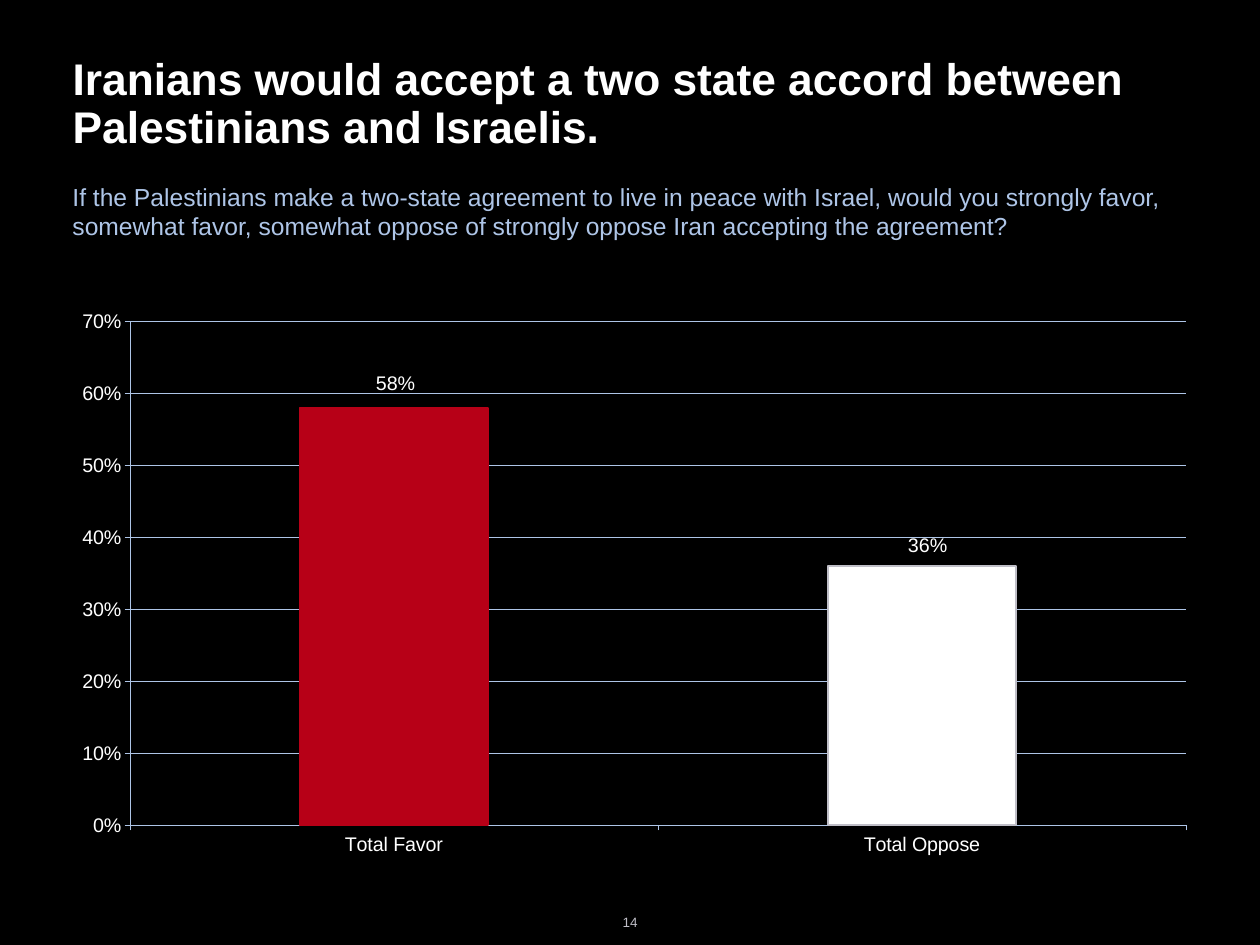
from dataclasses import dataclass

from lxml import etree
from pptx import Presentation
from pptx.chart.data import CategoryChartData
from pptx.dml.color import RGBColor
from pptx.enum import chart as ch, dml, text
from pptx.oxml import ns
from pptx.util import Pt

BLACK = RGBColor(0x00, 0x00, 0x00)
WHITE = RGBColor(0xFF, 0xFF, 0xFF)
RED = RGBColor(0xB7, 0x00, 0x17)
PALE_BLUE = RGBColor(0xAE, 0xC5, 0xE7)
GREY = RGBColor(0xBF, 0xBE, 0xC7)
FONT = "Arial"


@dataclass
class Label:
    words: str
    left: float
    top: float
    width: float
    height: float
    size: float
    color: RGBColor = WHITE
    bold: bool = False
    centered: bool = True
    wrap: bool = True
    inset: tuple[float, float] = (7.2, 3.6)
    line_spacing: float = 1.0


@dataclass
class Answer:
    name: str
    series: str
    share: float
    color: RGBColor
    outline: RGBColor


LABELS = [
    Label("14", 498.2, 739.4, 28, 21, 11, GREY, wrap=False),
    Label("Iranians would accept a two state accord between Palestinians and Israelis.",
          56.2, 43.9, 916.6, 128.2, 36, bold=True, centered=False,
          inset=(2.9, 2.9), line_spacing=0.9),
    Label("If the Palestinians make a two-state agreement to live in peace with Israel, "
          "would you strongly favor, somewhat favor, somewhat oppose of strongly oppose "
          "Iran accepting the agreement?",
          51.8, 144, 913, 55.4, 20, PALE_BLUE, centered=False),
    Label("58%", 285.1, 298.1, 72.7, 26.6, 16),
    Label("36%", 723.6, 429.1, 60.5, 26.6, 16),
]
ANSWERS = [
    Answer("Total Favor", "Series 1", 0.58, RED, RED),
    Answer("Total Oppose", "Series 2", 0.36, WHITE, GREY),
]
PLOT = {"x": 0.058, "y": 0.02, "w": 0.941, "h": 0.886}


def add_label(s, label: Label) -> None:
    sp = s.shapes.add_textbox(Pt(label.left), Pt(label.top), Pt(label.width), Pt(label.height))
    tf = sp.text_frame
    tf.word_wrap = label.wrap
    tf.margin_left = tf.margin_right = Pt(label.inset[0])
    tf.margin_top = tf.margin_bottom = Pt(label.inset[1])
    p = tf.paragraphs[0]
    p.text = label.words
    p.alignment = text.PP_ALIGN.CENTER if label.centered else text.PP_ALIGN.LEFT
    p.line_spacing = label.line_spacing
    p.font.name = FONT
    p.font.size = Pt(label.size)
    p.font.bold = label.bold
    p.font.color.rgb = label.color


def style_line(line, color: RGBColor, width: float) -> None:
    line.color.rgb = color
    line.width = Pt(width)


def style_axis(axis) -> None:
    axis.major_tick_mark = ch.XL_TICK_MARK.OUTSIDE
    axis.minor_tick_mark = ch.XL_TICK_MARK.NONE
    style_line(axis.format.line, PALE_BLUE, 0.19)
    font = axis.tick_labels.font
    font.name = FONT
    font.size = Pt(16)
    font.bold = False
    font.color.rgb = WHITE


def fix_plot_area(chart) -> None:
    area = chart._chartSpace.chart.plotArea
    for old in area.findall(ns.qn("c:layout")):
        area.remove(old)
    layout = etree.Element(ns.qn("c:layout"))
    manual = etree.SubElement(layout, ns.qn("c:manualLayout"))
    settings = {"layoutTarget": "inner", "xMode": "edge", "yMode": "edge", **PLOT}
    for tag, value in settings.items():
        etree.SubElement(manual, ns.qn(f"c:{tag}")).set("val", str(value))
    area.insert(0, layout)


def add_answer_chart(s) -> None:
    data = CategoryChartData(number_format="0%")
    data.categories = [answer.name for answer in ANSWERS]
    for answer in ANSWERS:
        data.add_series(answer.series, [answer.share if other is answer else None
                                        for other in ANSWERS])
    chart = s.shapes.add_chart(ch.XL_CHART_TYPE.COLUMN_CLUSTERED, Pt(52.6), Pt(252),
                               Pt(912.2), Pt(462.2), data).chart
    chart.has_legend = False
    chart.has_title = False
    chart.font.name = "Montserrat"
    chart.font.size = Pt(13.4)
    chart.font.bold = True
    chart.font.color.rgb = PALE_BLUE

    plot = chart.plots[0]
    plot.gap_width = 180
    plot.overlap = 100
    plot.vary_by_categories = False
    for series, answer in zip(plot.series, ANSWERS):
        series.invert_if_negative = False
        series.format.fill.solid()
        series.format.fill.fore_color.rgb = answer.color
        style_line(series.format.line, answer.outline, 1.5)

    style_axis(chart.category_axis)
    chart.category_axis.tick_label_position = ch.XL_TICK_LABEL_POSITION.LOW
    axis = chart.value_axis
    style_axis(axis)
    axis.minimum_scale = 0
    axis.maximum_scale = 0.7
    axis.major_unit = 0.1
    axis.tick_labels.number_format = "0%"
    axis.tick_labels.number_format_is_linked = False
    axis.has_major_gridlines = True
    grid = axis.major_gridlines.format.line
    style_line(grid, PALE_BLUE, 0.19)
    grid.dash_style = dml.MSO_LINE.SQUARE_DOT
    fix_plot_area(chart)


def main() -> None:
    prs = Presentation()
    prs.slide_width = Pt(1024)
    prs.slide_height = Pt(768)
    s = prs.slides.add_slide(prs.slide_layouts[6])
    s.background.fill.solid()
    s.background.fill.fore_color.rgb = BLACK
    add_answer_chart(s)
    for label in LABELS:
        add_label(s, label)
    prs.save("out.pptx")


if __name__ == "__main__":
    main()
